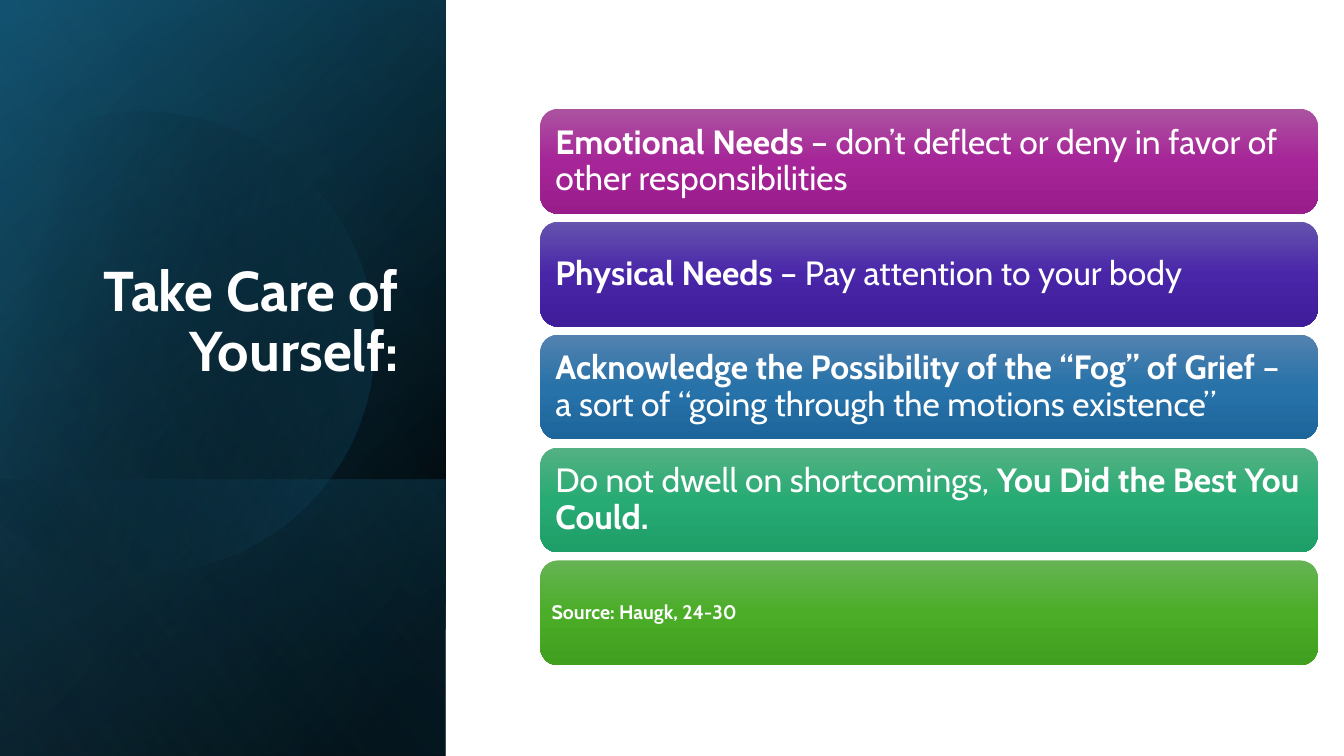
import math
from dataclasses import dataclass

import lxml.etree
import pptx
import pptx.dml.color
import pptx.enum.shapes
import pptx.enum.text
import pptx.oxml.ns
import pptx.util

Inches = pptx.util.Inches
Pt = pptx.util.Pt
qn = pptx.oxml.ns.qn


@dataclass(frozen=True)
class Theme:
    font: str = "Cabin"
    title_size: int = 40
    body_size: int = 24
    source_size: int = 14
    text: str = "FFFFFF"
    black: str = "000000"
    deep_blue: str = "104862"
    teal: str = "156082"
    sky: str = "46B1E1"
    purple: tuple = ("AC53A0", "A62598", "991C8B")
    indigo: tuple = ("6553AE", "4926A8", "3E1C9A")
    blue: tuple = ("5382AF", "2772A9", "1D669C")
    jade: tuple = ("54B183", "27AB74", "1E9E68")
    green: tuple = ("66B354", "4BAD28", "409F1E")


theme = Theme()


def paint_gradient(shape, stops, angle):
    """Fill with (position %, colour, opacity %) stops; no line or shadow."""
    shape.shadow.inherit = False
    shape.line.fill.background()
    shape.fill.background()
    properties = shape._element.spPr
    gradient = lxml.etree.Element(qn("a:gradFill"), rotWithShape="1")
    stop_list = lxml.etree.SubElement(gradient, qn("a:gsLst"))
    for position, colour, opacity in stops:
        stop = lxml.etree.SubElement(stop_list, qn("a:gs"), pos=str(position * 1000))
        tint = lxml.etree.SubElement(stop, qn("a:srgbClr"), val=colour)
        if opacity < 100:
            lxml.etree.SubElement(tint, qn("a:alpha"), val=str(opacity * 1000))
    lxml.etree.SubElement(gradient, qn("a:lin"), ang=str(angle * 60000), scaled="0")
    properties.replace(properties.find(qn("a:noFill")), gradient)


def write_runs(shape, runs, size, alignment, anchor, inset):
    """Write (text, bold) runs as the single paragraph of a shape."""
    frame = shape.text_frame
    frame.word_wrap = True
    frame.vertical_anchor = anchor
    frame.margin_left = frame.margin_right = Inches(inset)
    frame.margin_top = frame.margin_bottom = Inches(inset)
    paragraph = frame.paragraphs[0]
    paragraph.alignment = alignment
    paragraph.line_spacing = 0.9
    for text, bold in runs:
        run = paragraph.add_run()
        run.text = text
        run.font.name = theme.font
        run.font.size = Pt(size)
        run.font.bold = bold
        run.font.color.rgb = pptx.dml.color.RGBColor.from_string(theme.text)


presentation = pptx.Presentation()
presentation.slide_width = Inches(13.33)
presentation.slide_height = Inches(7.5)
slide = presentation.slides.add_slide(presentation.slide_layouts[6])
shapes = slide.shapes
preset = pptx.enum.shapes.MSO_SHAPE
align = pptx.enum.text.PP_ALIGN
anchors = pptx.enum.text.MSO_ANCHOR

# Left panel: turned rectangles, with a clipped disc below the last one
full_panel = (-1.54, 1.54, 7.5, 4.42)
lower_panel = (0.84, 3.92, 2.74, 4.42)
panel_layers = [
    (full_panel, [(8, theme.black, 100), (100, theme.deep_blue, 100)], 50),
    (full_panel, [(0, theme.black, 0), (99, theme.teal, 46)], 30),
    (lower_panel, [(2, theme.teal, 29), (100, theme.black, 30)], 130),
    (full_panel, [(0, theme.black, 0), (99, theme.sky, 11)], 120),
]
disc_x, disc_y, disc_radius = 1.42, 3.35, 2.29
disc_tilt = 16.1
disc_half_arc = 133.6
disc_steps = 120

for layer_index, (box, stops, angle) in enumerate(panel_layers):
    if layer_index == len(panel_layers) - 1:
        arc = []
        for step in range(disc_steps + 1):
            turn = math.radians(disc_tilt + disc_half_arc * (2 * step / disc_steps - 1))
            arc.append((Inches(disc_x + disc_radius * math.cos(turn)),
                        Inches(disc_y + disc_radius * math.sin(turn))))
        builder = shapes.build_freeform(*arc[0])
        builder.add_line_segments(arc[1:], close=True)
        disc = builder.convert_to_shape()
        disc.rotation = -disc_tilt
        paint_gradient(disc, [(29, theme.black, 0), (100, theme.teal, 43)], 30)
    panel = shapes.add_shape(preset.RECTANGLE, *map(Inches, box))
    panel.rotation = 90
    panel._element.spPr.xfrm.set("flipH", "1")
    paint_gradient(panel, stops, angle)

title = shapes.add_textbox(Inches(0.64), Inches(1.84), Inches(3.41), Inches(2.62))
write_runs(title, [("Take Care of Yourself:", True)], theme.title_size,
           align.RIGHT, anchors.BOTTOM, 0.1)
title.text_frame.margin_bottom = Inches(0.65)

# Right side: five equally spaced bars
bars = [
    (theme.purple, theme.body_size, 0.1,
     [("Emotional Needs ", True),
      ("– don’t deflect or deny in favor of other responsibilities", False)]),
    (theme.indigo, theme.body_size, 0.1,
     [("Physical Needs", True), (" – Pay attention to your body", False)]),
    (theme.blue, theme.body_size, 0.1,
     [("Acknowledge the Possibility of the “Fog” of Grief", True),
      (" – a sort of “going through the motions existence”", False)]),
    (theme.jade, theme.body_size, 0.1,
     [("Do not dwell on shortcomings, ", False),
      ("You Did the Best You Could.", True)]),
    (theme.green, theme.source_size, 0.06, [("Source: Haugk, 24-30", True)]),
]
bar_top, bar_pitch = 1.08, 1.12

for row, (colours, size, inset, runs) in enumerate(bars):
    bar = shapes.add_shape(preset.ROUNDED_RECTANGLE, Inches(5.36),
                           Inches(bar_top + row * bar_pitch), Inches(7.71), Inches(1.04))
    paint_gradient(bar, [(50 * i, colour, 100) for i, colour in enumerate(colours)], 90)
    write_runs(bar, runs, size, align.LEFT, anchors.MIDDLE, inset)

presentation.save("out.pptx")
